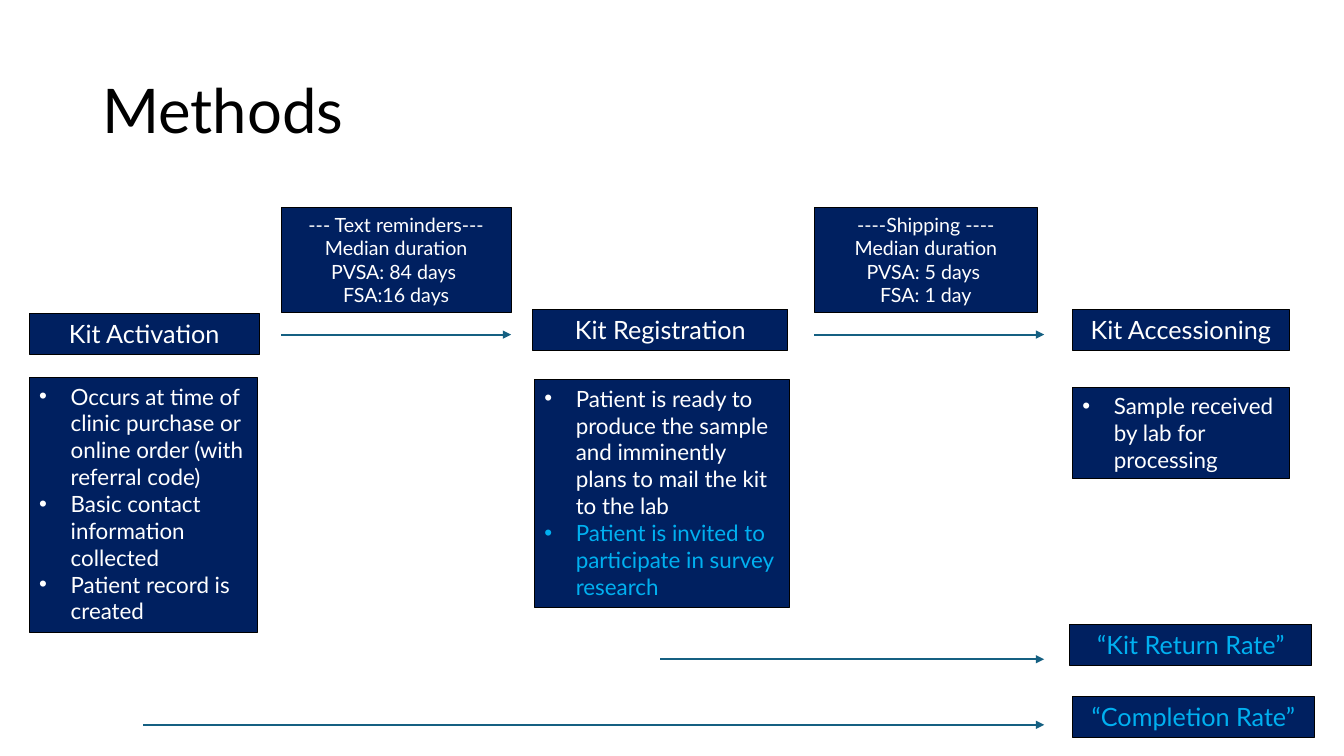
from dataclasses import dataclass

from lxml import etree
from pptx import Presentation
from pptx.dml.color import RGBColor
from pptx.enum.shapes import MSO_CONNECTOR, MSO_SHAPE
from pptx.enum.text import MSO_ANCHOR, MSO_AUTO_SIZE, PP_ALIGN
from pptx.oxml.ns import qn
from pptx.util import Pt

RECTANGLE = MSO_SHAPE.RECTANGLE
STRAIGHT = MSO_CONNECTOR.STRAIGHT
TOP, MIDDLE = MSO_ANCHOR.TOP, MSO_ANCHOR.MIDDLE
LEFT, CENTER = PP_ALIGN.LEFT, PP_ALIGN.CENTER
GROW = MSO_AUTO_SIZE.SHAPE_TO_FIT_TEXT


@dataclass(frozen=True)
class Theme:
    font: str = "Lato"
    black: RGBColor = RGBColor(0x00, 0x00, 0x00)
    white: RGBColor = RGBColor(0xFF, 0xFF, 0xFF)
    navy: RGBColor = RGBColor(0x00, 0x20, 0x60)
    teal: RGBColor = RGBColor(0x15, 0x60, 0x82)
    highlight: RGBColor = RGBColor(0x00, 0xB0, 0xF0)
    title_size: float = 44
    heading_size: float = 18
    detail_size: float = 16
    duration_size: float = 14
    border: float = 0.75
    arrow: float = 1.5
    bullet_indent: float = 22.5


THEME = Theme()


@dataclass(frozen=True)
class Line:
    text: str
    color: RGBColor = THEME.white


@dataclass(frozen=True)
class Box:
    left: float
    top: float
    width: float
    height: float
    size: float
    lines: tuple[Line, ...]
    bulleted: bool = False


@dataclass(frozen=True)
class Arrow:
    start: float
    end: float
    y: float


# Shared positions, in points
ACTIVATION_X, REMINDERS_X, SHIPPING_X, ACCESSIONING_X = 20.9, 200.9, 581.8, 766.1
REMINDERS_WIDTH, REGISTRATION_WIDTH, ACCESSIONING_WIDTH = 164.2, 182.2, 154.8
RATE_WIDTH = 172.8
HEADING_HEIGHT, DURATION_HEIGHT = 29.1, 74.9
DURATION_TOP, STEP_ARROW_Y, ARROW_END = 148.3, 239, 745.9


def heading(left: float, top: float, width: float, text: str,
            color: RGBColor = THEME.white) -> Box:
    return Box(left, top, width, HEADING_HEIGHT, THEME.heading_size, (Line(text, color),))


def details(left: float, top: float, width: float, height: float, *lines: Line) -> Box:
    return Box(left, top, width, height, THEME.detail_size, lines, bulleted=True)


def duration(left: float, width: float, *texts: str) -> Box:
    return Box(left, DURATION_TOP, width, DURATION_HEIGHT, THEME.duration_size,
               tuple(Line(text) for text in texts))


BOXES = (
    # Steps
    heading(ACTIVATION_X, 223.9, REMINDERS_WIDTH, "Kit Activation"),
    heading(380.6, 221, REGISTRATION_WIDTH, "Kit Registration"),
    heading(ACCESSIONING_X, 221, ACCESSIONING_WIDTH, "Kit Accessioning"),
    # What happens in each step
    details(ACTIVATION_X, 269.8, 162.8, 181.7,
            Line("Occurs at time of clinic purchase or online order (with referral code)"),
            Line("Basic contact information collected"),
            Line("Patient record is created")),
    details(381.7, 271.3, REGISTRATION_WIDTH, 162.4,
            Line("Patient is ready to produce the sample and imminently plans to mail "
                 "the kit to the lab"),
            Line("Patient is invited to participate in survey research", THEME.highlight)),
    details(ACCESSIONING_X, 276.6, ACCESSIONING_WIDTH, 65.4,
            Line("Sample received by lab for processing")),
    # Time between steps
    duration(REMINDERS_X, REMINDERS_WIDTH, "--- Text reminders---", "Median duration",
             "PVSA: 84 days ", "FSA:16 days"),
    duration(SHIPPING_X, 159.1, "----Shipping ----", "Median duration",
             "PVSA: 5 days ", "FSA: 1 day"),
    # Rates
    heading(764.3, 446, RATE_WIDTH, "“Kit Return Rate”", THEME.highlight),
    heading(ACCESSIONING_X, 497.4, RATE_WIDTH, "“Completion Rate”", THEME.highlight),
)

ARROWS = (
    Arrow(REMINDERS_X, REMINDERS_X + REMINDERS_WIDTH, STEP_ARROW_Y),
    Arrow(SHIPPING_X, ARROW_END, STEP_ARROW_Y),
    Arrow(471.6, ARROW_END, 470.9),
    Arrow(102.2, ARROW_END, 517.7),
)


def add_run(paragraph, text: str, size: float, color: RGBColor) -> None:
    run = paragraph.add_run()
    run.text = text
    run.font.name = THEME.font
    run.font.size = Pt(size)
    run.font.color.rgb = color


def add_bullet(paragraph) -> None:
    properties = paragraph._p.get_or_add_pPr()
    properties.set("marL", str(Pt(THEME.bullet_indent)))
    properties.set("indent", str(-Pt(THEME.bullet_indent)))
    etree.SubElement(properties, qn("a:buFont"), typeface="Arial")
    etree.SubElement(properties, qn("a:buChar"), char="•")


def add_title(slide, text: str) -> None:
    shape = slide.shapes.add_textbox(Pt(66), Pt(28.8), Pt(828), Pt(104.4))
    frame = shape.text_frame
    frame.word_wrap = True
    frame.vertical_anchor = MIDDLE
    paragraph = frame.paragraphs[0]
    paragraph.line_spacing = 0.9
    add_run(paragraph, text, THEME.title_size, THEME.black)


def add_box(slide, box: Box) -> None:
    shape = slide.shapes.add_shape(RECTANGLE, Pt(box.left), Pt(box.top),
                                   Pt(box.width), Pt(box.height))
    shape.shadow.inherit = False
    shape.fill.solid()
    shape.fill.fore_color.rgb = THEME.navy
    shape.line.color.rgb = THEME.black
    shape.line.width = Pt(THEME.border)
    frame = shape.text_frame
    frame.word_wrap = True
    frame.auto_size = GROW
    frame.vertical_anchor = TOP
    for index, line in enumerate(box.lines):
        paragraph = frame.add_paragraph() if index else frame.paragraphs[0]
        paragraph.alignment = LEFT if box.bulleted else CENTER
        if box.bulleted:
            add_bullet(paragraph)
        add_run(paragraph, line.text, box.size, line.color)


def add_arrow(slide, arrow: Arrow) -> None:
    connector = slide.shapes.add_connector(STRAIGHT, Pt(arrow.start), Pt(arrow.y),
                                           Pt(arrow.end), Pt(arrow.y))
    connector.line.color.rgb = THEME.teal
    connector.line.width = Pt(THEME.arrow)
    properties = connector._element.spPr
    etree.SubElement(properties.find(qn("a:ln")), qn("a:tailEnd"), type="triangle")
    etree.SubElement(properties, qn("a:effectLst"))


def main() -> None:
    presentation = Presentation()
    presentation.slide_width, presentation.slide_height = Pt(960), Pt(540)
    slide = presentation.slides.add_slide(presentation.slide_layouts[6])
    add_title(slide, "Methods")
    for box in BOXES:
        add_box(slide, box)
    for arrow in ARROWS:
        add_arrow(slide, arrow)
    presentation.save("out.pptx")


if __name__ == "__main__":
    main()
